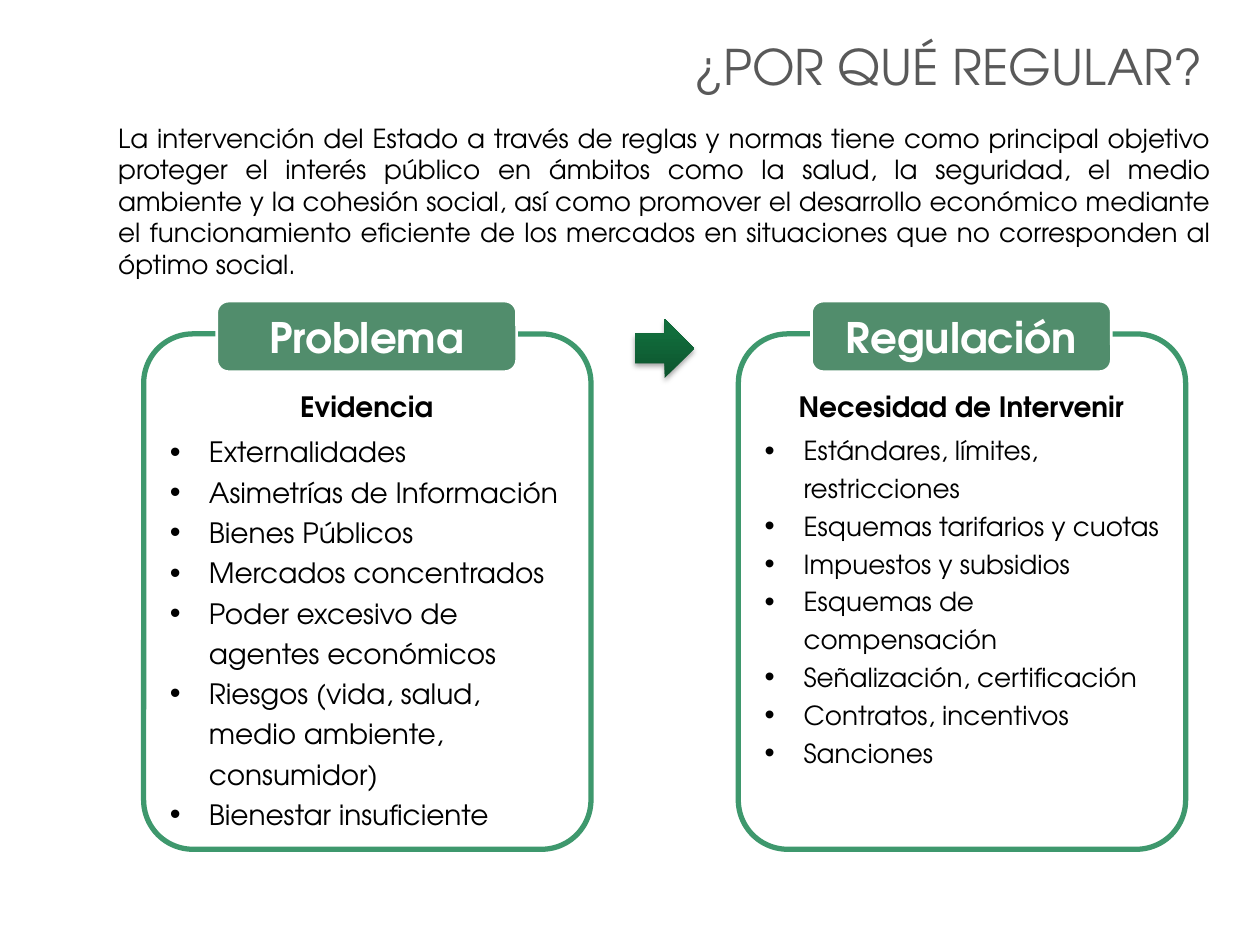
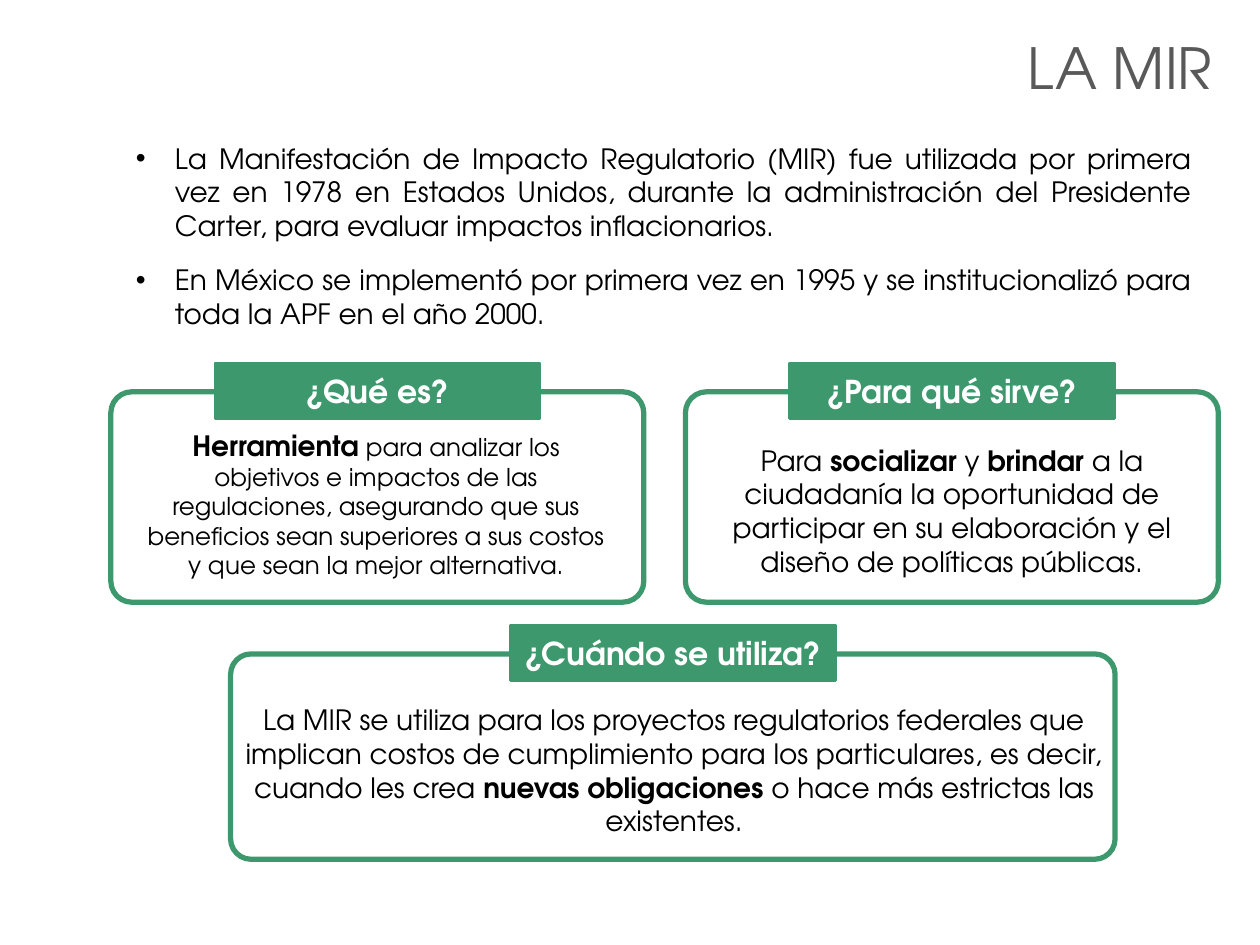
from lxml import etree
from pptx import Presentation
from pptx import util as u
from pptx.dml.color import RGBColor
from pptx.enum import shapes, text
from pptx.oxml import parse_xml
from pptx.oxml.ns import qn, nsdecls

HUES = dict(frame="3E986D", tag="518D6C", title="595959", ink="000000",
            white="FFFFFF", dark="0D542E", leaf="116D3C")
FACE = "TeX Gyre Adventor"
FORM = shapes.MSO_SHAPE
SIDE = text.PP_ALIGN
MID = text.MSO_ANCHOR.MIDDLE


def box(slide, at, form=None, fill=None, line=None, width=3, round=None):
    """Add a preset shape, or a wrapped text box when no form is given."""
    spot = [u.Inches(n) for n in at]
    if form is None:
        item = slide.shapes.add_textbox(*spot)
        item.text_frame.word_wrap = True
        return item
    item = slide.shapes.add_shape(form, *spot)
    item.shadow.inherit = False
    if round:
        item.adjustments[0] = round
    if fill:
        item.fill.solid()
        item.fill.fore_color.rgb = RGBColor.from_string(HUES[fill])
    else:
        item.fill.background()
    if line:
        item.line.color.rgb = RGBColor.from_string(HUES[line])
        item.line.width = u.Pt(width)
    else:
        item.line.fill.background()
    return item


def write(item, paras, size, hue="ink", bold=False, bullet=None, anchor=None, **form):
    """Fill item with paragraphs; a list is cut into runs, (text, size) ones bold."""
    frame = item.text_frame
    if anchor is not None:
        frame.vertical_anchor = anchor
    for i, runs in enumerate(paras):
        para = frame.add_paragraph() if i else frame.paragraphs[0]
        for key, value in form.items():
            setattr(para, key, value)
        if bullet:
            props = para._p.get_or_add_pPr()
            props.set("marL", str(u.Inches(0.31)))
            props.set("indent", str(-u.Inches(0.31)))
            etree.SubElement(props, qn("a:buSzPct"), val=str(bullet * 1000))
            etree.SubElement(props, qn("a:buFont"), typeface="Arial")
            etree.SubElement(props, qn("a:buChar"), char="•")
        for part in [runs] if isinstance(runs, str) else runs:
            strong = isinstance(part, tuple)
            words, points = part if strong else (part, size)
            run = para.add_run()
            run.text = words
            look = dict(name=FACE, size=u.Pt(points), bold=bold or strong)
            for key, value in look.items():
                setattr(run.font, key, value)
            run.font.color.rgb = RGBColor.from_string(HUES[hue])


deck = Presentation()
deck.slide_width, deck.slide_height = u.Inches(10), u.Inches(7.5)
titles = [("¿POR QUÉ REGULAR?", 28, (3.66, 0.21, 5.98, 0.62)),
          ("LA MIR", 32.4, (3.74, 0.26, 5.98, 0.54))]
for words, size, at in titles:
    slide = deck.slides.add_slide(deck.slide_layouts[6])
    write(box(slide, at), [words], size, "title", anchor=MID, alignment=SIDE.RIGHT)
why, mir = deck.slides

# Why regulate: problem leads to regulation
write(box(why, (0.84, 0.92, 8.87, 1.36)), [
    "La intervención del Estado a través de reglas y normas tiene como principal "
    "objetivo proteger el interés público en ámbitos como la salud, la seguridad, "
    "el medio ambiente y la cohesión social, así como promover el desarrollo "
    "económico mediante el funcionamiento eficiente de los mercados en situaciones "
    "que no corresponden al óptimo social."], 15, alignment=SIDE.JUSTIFY)

panels = [
    ("Problema", "Evidencia", 16, [
        "Externalidades", "Asimetrías de Información", "Bienes Públicos",
        "Mercados concentrados", "Poder excesivo de agentes económicos",
        "Riesgos (vida, salud, medio ambiente, consumidor)",
        "Bienestar insuficiente"]),
    ("Regulación", "Necesidad de Intervenir", 15, [
        "Estándares, límites, restricciones", "Esquemas tarifarios y cuotas",
        "Impuestos y subsidios", "Esquemas de compensación",
        "Señalización, certificación", "Contratos, incentivos", "Sanciones"])]
for i, (name, head, size, points) in enumerate(panels):
    left = 1.14 + 4.72 * i
    box(why, (left, 2.65, 3.55, 4.09), FORM.ROUNDED_RECTANGLE, line="frame", round=0.11)
    write(box(why, (left + 0.11, 3.35, 3.33, 3.33)), points, size,
          bullet=110, line_spacing=1.2)
    tag = box(why, (left + 0.58, 2.39, 2.38, 0.56), FORM.ROUNDED_RECTANGLE,
              "tag", "white", 1.5)
    write(tag, [name], 24, "white", True, anchor=MID, alignment=SIDE.CENTER)
    write(box(why, (left + 0.2, 3.04, 3.14, 0.37)), [head], 16, bold=True,
          alignment=SIDE.CENTER)

arrow = box(why, (5.04, 2.53, 0.47, 0.47), FORM.RIGHT_ARROW)
arrow.fill.gradient()
arrow.fill.gradient_angle = 90
for stop, hue, place in zip(arrow.fill.gradient_stops, ("dark", "leaf"), (0, 0.8)):
    stop.color.rgb = RGBColor.from_string(HUES[hue])
    stop.position = place
arrow._element.spPr.find(qn("a:effectLst")).append(parse_xml(
    f'<a:outerShdw {nsdecls("a")} blurRad="{u.Pt(3.1)}" dist="{u.Pt(1.8)}" '
    f'dir="5400000" rotWithShape="0"><a:srgbClr val="{HUES["ink"]}">'
    '<a:alpha val="35000"/></a:srgbClr></a:outerShdw>'))

# The MIR: background and three questions
write(box(mir, (0.98, 1.07, 8.58, 1.62)), [
    "La Manifestación de Impacto Regulatorio (MIR) fue utilizada por primera vez en "
    "1978 en Estados Unidos, durante la administración del Presidente Carter, para "
    "evaluar impactos inflacionarios.",
    "En México se implementó por primera vez en 1995 y se institucionalizó para toda "
    "la APF en el año 2000."],
    16, bullet=100, alignment=SIDE.JUSTIFY, space_after=u.Pt(12))

cards = [
    ("¿Qué es?", (0.88, 3.11, 4.23, 1.67), (1, 3.35, 3.97, 1.31), 14, [
        ("Herramienta", 16),
        " para analizar los objetivos e impactos de las regulaciones, asegurando que "
        "sus beneficios sean superiores a sus costos y que sean la mejor alternativa."]),
    ("¿Para qué sirve?", (5.44, 3.11, 4.23, 1.67), (5.57, 3.47, 3.97, 1.18), 16, [
        "Para ", ("socializar", 16), " y ", ("brindar ", 16),
        "a la ciudadanía la oportunidad de participar en su elaboración y el diseño "
        "de políticas públicas."]),
    ("¿Cuándo se utiliza?", (1.83, 5.19, 7.02, 1.63), (1.83, 5.53, 7.04, 1.29), 16, [
        "La MIR se utiliza para los proyectos regulatorios federales que implican "
        "costos de cumplimiento para los particulares, es decir, cuando les crea ",
        ("nuevas obligaciones", 16), " o hace más estrictas las existentes."])]
for name, edge, area, size, runs in cards:
    left, top, wide, _ = edge
    write(box(mir, area), [runs], size, alignment=SIDE.CENTER)
    box(mir, edge, FORM.ROUNDED_RECTANGLE, line="frame", round=0.1)
    tag = box(mir, (left + (wide - 2.58) / 2, top - 0.23, 2.58, 0.44),
              FORM.RECTANGLE, "frame", "frame", 1.5)
    write(tag, [name], 18, "white", True, anchor=MID, alignment=SIDE.CENTER)

deck.save("out.pptx")
